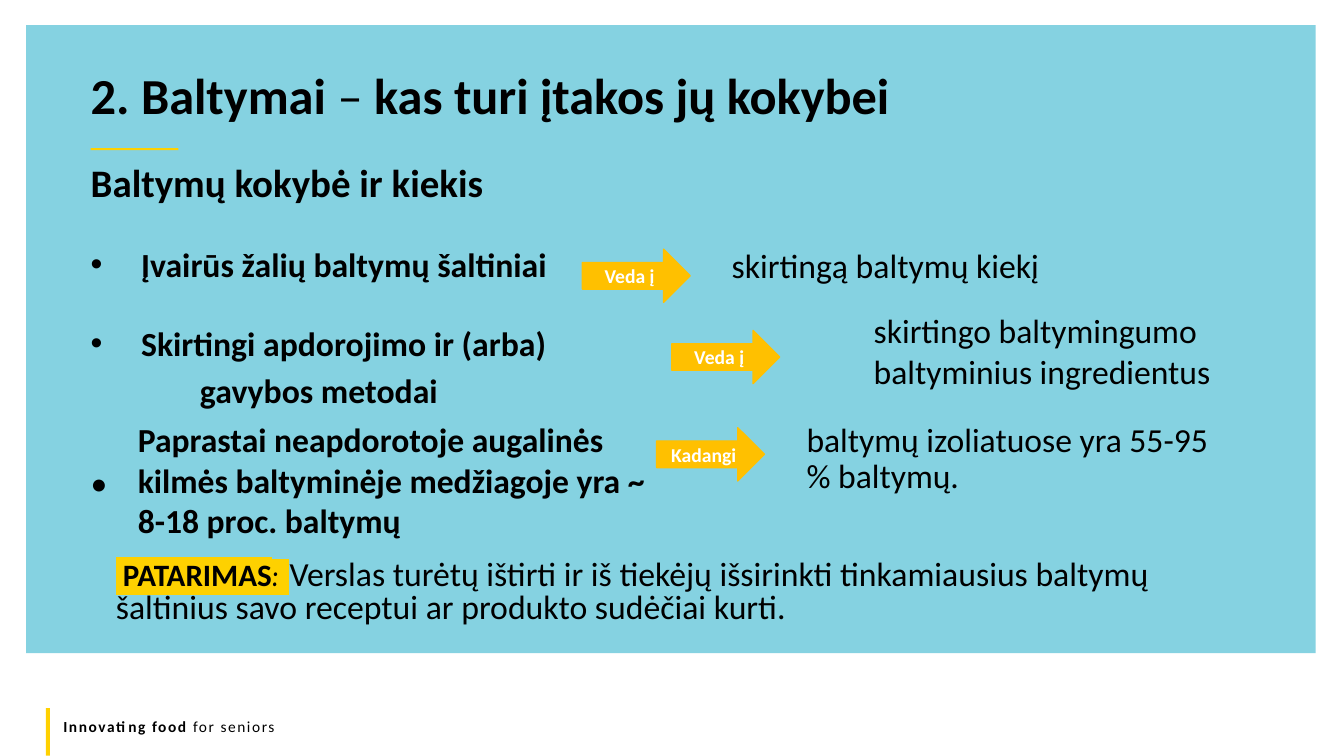
"""Build the slide on what affects protein quality."""
from lxml.etree import SubElement
from pptx import Presentation
from pptx.dml.color import RGBColor
from pptx.enum.shapes import MSO_SHAPE
from pptx.enum.text import MSO_ANCHOR, MSO_AUTO_SIZE, PP_ALIGN
from pptx.oxml.ns import qn
from pptx.util import Pt

BLACK = RGBColor(0x00, 0x00, 0x00)
WHITE = RGBColor(0xFF, 0xFF, 0xFF)
AQUA = RGBColor(0x85, 0xD2, 0xE1)
YELLOW = RGBColor(0xFF, 0xD1, 0x00)
AMBER = RGBColor(0xFF, 0xC0, 0x00)
MARKER = RGBColor(0xFE, 0xD1, 0x00)


def add_span(para, text, size, bold=False, color=BLACK, font="Calibri", marker=None):
    span = para.add_run()
    span.text = text
    span.font.size = Pt(size)
    span.font.bold = bold
    span.font.color.rgb = color
    if marker is not None:
        highlight = SubElement(span.font._element, qn("a:highlight"))
        SubElement(highlight, qn("a:srgbClr"), val=str(marker))
    span.font.name = font
    return span


def add_block(page, kind, left, top, width, height, color):
    block = page.shapes.add_shape(kind, Pt(left), Pt(top), Pt(width), Pt(height))
    block.shadow.inherit = False
    block.fill.solid()
    block.fill.fore_color.rgb = color
    block.line.fill.background()
    return block


deck = Presentation()
deck.slide_width, deck.slide_height = Pt(960), Pt(540)
page = deck.slides.add_slide(deck.slide_layouts[1])

for left, top, width, height, color in [
    (18.7, 18, 921, 448.5, AQUA),
    (64.8, 105.8, 62.6, 1.5, YELLOW),
    (32.8, 505.8, 2.9, 34, YELLOW),
]:
    add_block(page, MSO_SHAPE.RECTANGLE, left, top, width, height, color)

title, body = page.shapes.title, page.placeholders[1]
for holder, top, height in [(title, 50.4, 46), (body, 115.9, 341)]:
    holder.left, holder.top, holder.width, holder.height = Pt(57.6), Pt(top), Pt(851), Pt(height)
    holder.text_frame.word_wrap = True
    holder.text_frame.auto_size = MSO_AUTO_SIZE.NONE
    holder.text_frame.vertical_anchor = MSO_ANCHOR.TOP
    page.shapes._spTree.append(holder._element)

para = title.text_frame.paragraphs[0]
para.alignment = PP_ALIGN.LEFT
para.line_spacing = 0.8
add_span(para, "2. Baltymai ", 36, True)
add_span(para, "–", 36)
add_span(para, " kas turi įtakos jų kokybei", 36, True)

body_lines = [
    ("Baltymų kokybė ir kiekis", 27.8, 0, 0, False),
    ("Įvairūs žalių baltymų šaltiniai", 24.1, 33.5, 36, True),
    ("Skirtingi apdorojimo ir (arba)", 24.1, 33.5, 36, True),
    ("gavybos metodai", 24.1, 10, 78, False),
    ("•", 24.1, 42.5, 0, False),
    ("", 24.1, 42.5, 18, False),
]
for index, (text, size, gap, margin, bulleted) in enumerate(body_lines):
    para = body.text_frame.paragraphs[0] if index == 0 else body.text_frame.add_paragraph()
    para.line_spacing = 0.8
    para.space_before = Pt(gap)
    properties = para._p.get_or_add_pPr()
    properties.set("marL", str(Pt(margin)))
    properties.set("indent", str(Pt(-margin if bulleted else 0)))
    if bulleted:
        SubElement(properties, qn("a:buFont"), typeface="Arial")
        SubElement(properties, qn("a:buChar"), char="•")
    else:
        SubElement(properties, qn("a:buNone"))
    if text:
        add_span(para, text, size, text != "•")
add_span(para, " PATARIMAS", 22.2, True, marker=MARKER)
add_span(para, ": ", 22.2, True, font="Comic Neue", marker=MARKER)
add_span(
    para,
    "Verslas turėtų ištirti ir iš tiekėjų išsirinkti tinkamiausius baltymų "
    "šaltinius savo receptui ar produkto sudėčiai kurti.",
    24.1,
)

for label, left, top in [("Veda į", 416, 178), ("Veda į", 480, 236), ("Kadangi", 469, 305.5)]:
    arrow = add_block(page, MSO_SHAPE.RIGHT_ARROW, left, top, 77, 38, AMBER)
    arrow.line.color.rgb = AMBER
    arrow.line.width = Pt(1)
    arrow.text_frame.vertical_anchor = MSO_ANCHOR.MIDDLE
    para = arrow.text_frame.paragraphs[0]
    para.alignment = PP_ALIGN.CENTER
    add_span(para, label, 14, True, WHITE)

for left, top, width, height, spacing, spans in [
    (515.5, 171.4, 300, 36, 1, [("skirtingą baltymų kiekį", 24.1, False)]),
    (617, 218, 275, 65.5, 1, [("skirtingo baltymingumo baltyminius ingredientus", 24, False)]),
    (91.4, 296, 382.5, 94.5, 1,
     [("Paprastai neapdorotoje augalinės kilmės baltyminėje medžiagoje yra ~ "
       "8-18 proc. baltymų", 24, True)]),
    (569, 299, 317, 60, 0.9, [("baltymų izoliatuose yra 55-95 % baltymų.", 24, False)]),
    (38.2, 509, 864, 21, 1, [("Innovating food ", 11, True), ("for seniors", 11, False)]),
]:
    box = page.shapes.add_textbox(Pt(left), Pt(top), Pt(width), Pt(height))
    box.text_frame.word_wrap = True
    para = box.text_frame.paragraphs[0]
    para.line_spacing = spacing
    for text, size, bold in spans:
        span = add_span(para, text, size, bold)
        if size == 11:
            span.font._element.set("spc", "110")

deck.save("out.pptx")
